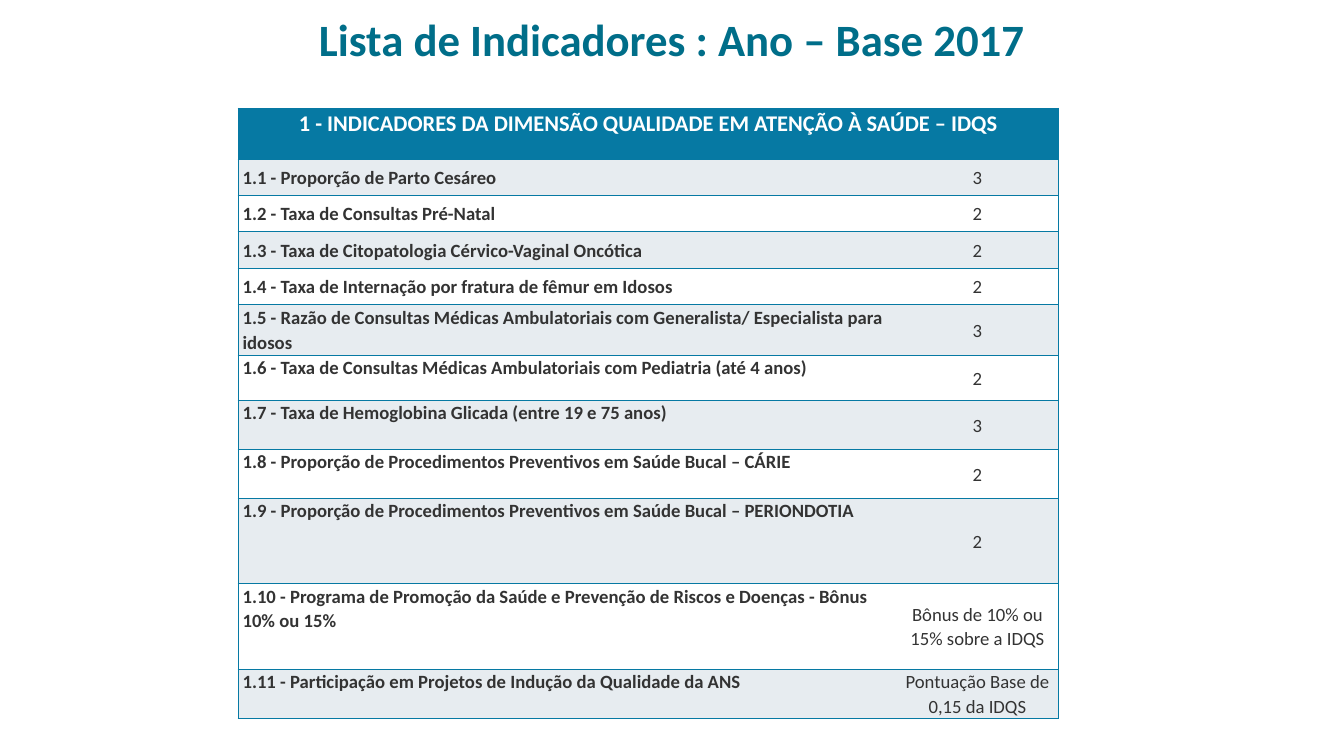
from typing import NamedTuple

from lxml import etree
from pptx import Presentation
from pptx.dml.color import RGBColor
from pptx.enum import text
from pptx.oxml import ns
from pptx.util import Inches, Pt

TEAL = RGBColor(0x00, 0x6E, 0x89)
BLUE = RGBColor(0x06, 0x79, 0xA3)
PALE = RGBColor(0xE7, 0xEC, 0xF0)
WHITE = RGBColor(0xFF, 0xFF, 0xFF)
DARK = RGBColor(0x33, 0x33, 0x33)
FONT = "Calibri"
TOP, MIDDLE = text.MSO_ANCHOR.TOP, text.MSO_ANCHOR.MIDDLE
LEFT, CENTER = text.PP_ALIGN.LEFT, text.PP_ALIGN.CENTER

TITLE = "Lista de Indicadores : Ano – Base 2017"
HEADING = "1 - INDICADORES DA DIMENSÃO QUALIDADE EM ATENÇÃO À SAÚDE – IDQS"
HEADING_HEIGHT = 0.76
COLUMN_WIDTHS = (9.8, 2.41)


class Indicator(NamedTuple):
    name: str
    weight: str
    height: float
    anchor: text.MSO_ANCHOR = TOP


INDICATORS = [
    Indicator("1.1 - Proporção de Parto Cesáreo", "3", 0.54, MIDDLE),
    Indicator("1.2 - Taxa de Consultas Pré-Natal", "2", 0.54, MIDDLE),
    Indicator("1.3 - Taxa de Citopatologia Cérvico-Vaginal Oncótica", "2", 0.54, MIDDLE),
    Indicator("1.4 - Taxa de Internação por fratura de fêmur em Idosos", "2", 0.54, MIDDLE),
    Indicator("1.5 - Razão de Consultas Médicas Ambulatoriais com Generalista/ "
              "Especialista para idosos", "3", 0.76, MIDDLE),
    Indicator("1.6 - Taxa de Consultas Médicas Ambulatoriais com Pediatria (até 4 anos)",
              "2", 0.67),
    Indicator("1.7 - Taxa de Hemoglobina Glicada (entre 19 e 75 anos)", "3", 0.73),
    Indicator("1.8 - Proporção de Procedimentos Preventivos em Saúde Bucal – CÁRIE",
              "2", 0.73),
    Indicator("1.9 - Proporção de Procedimentos Preventivos em Saúde Bucal – PERIONDOTIA",
              "2", 1.27),
    Indicator("1.10 - Programa de Promoção da Saúde e Prevenção de Riscos e Doenças - "
              "Bônus 10% ou 15%", "Bônus de 10% ou 15% sobre a IDQS", 1.27),
    Indicator("1.11 - Participação em Projetos de Indução da Qualidade da ANS",
              "Pontuação Base de 0,15 da IDQS", 0.73),
]


def add_run(paragraph, words: str, size: float, color: RGBColor, bold: bool) -> None:
    run = paragraph.add_run()
    run.text = words
    run.font.name = FONT
    run.font.size = Pt(size)
    run.font.bold = bold
    run.font.color.rgb = color


def set_borders(cell, sides: str) -> None:
    """Draw the sides named by L, R, T, B; the other sides get no line."""
    properties = cell._tc.get_or_add_tcPr()
    for index, side in enumerate("LRTB"):
        line = etree.Element(ns.qn(f"a:ln{side}"), w=str(Pt(1)))
        if side in sides:
            fill = etree.SubElement(line, ns.qn("a:solidFill"))
            etree.SubElement(fill, ns.qn("a:srgbClr"), val=str(BLUE))
        else:
            etree.SubElement(line, ns.qn("a:noFill"))
        properties.insert(index, line)


def fill_cell(cell, words: str, fill: RGBColor, sides: str, align: text.PP_ALIGN,
              anchor: text.MSO_ANCHOR, size: float = 20, color: RGBColor = DARK,
              bold: bool = False) -> None:
    cell.margin_left = cell.margin_right = Inches(0.07)
    cell.margin_top = cell.margin_bottom = 0
    cell.vertical_anchor = anchor
    cell.fill.solid()
    cell.fill.fore_color.rgb = fill
    set_borders(cell, sides)
    paragraph = cell.text_frame.paragraphs[0]
    paragraph.alignment = align
    paragraph.line_spacing = 1.07
    add_run(paragraph, words, size, color, bold)


def add_title(slide) -> None:
    title = slide.shapes.title
    title.left, title.top = 0, Inches(0.11)
    title.width, title.height = Inches(20), Inches(0.87)
    frame = title.text_frame
    frame.auto_size = text.MSO_AUTO_SIZE.NONE
    frame.vertical_anchor = TOP
    frame.margin_left = frame.margin_right = Inches(0.15)
    frame.margin_top = frame.margin_bottom = Inches(0.07)
    frame.paragraphs[0].alignment = CENTER
    add_run(frame.paragraphs[0], TITLE, 48, TEAL, True)


def add_indicator_table(slide) -> None:
    heights = [HEADING_HEIGHT] + [indicator.height for indicator in INDICATORS]
    table = slide.shapes.add_table(
        len(heights), len(COLUMN_WIDTHS), Inches(3.54), Inches(1.61),
        Inches(sum(COLUMN_WIDTHS)), Inches(sum(heights))).table
    table.horz_banding = False
    for column, width in zip(table.columns, COLUMN_WIDTHS):
        column.width = Inches(width)
    for row, height in zip(table.rows, heights):
        row.height = Inches(height)

    heading = table.cell(0, 0)
    heading.merge(table.cell(0, 1))
    fill_cell(heading, HEADING, BLUE, "LRTB", CENTER, TOP, 24, WHITE, True)
    for number, indicator in enumerate(INDICATORS, start=1):
        fill = PALE if number % 2 else WHITE
        fill_cell(table.cell(number, 0), indicator.name, fill, "LTB", LEFT,
                  indicator.anchor, bold=True)
        fill_cell(table.cell(number, 1), indicator.weight, fill, "RTB", CENTER, MIDDLE)


def main() -> None:
    presentation = Presentation()
    presentation.slide_width = Inches(20)
    presentation.slide_height = Inches(11.25)
    slide = presentation.slides.add_slide(presentation.slide_layouts[5])
    add_title(slide)
    add_indicator_table(slide)
    presentation.save("out.pptx")


if __name__ == "__main__":
    main()
